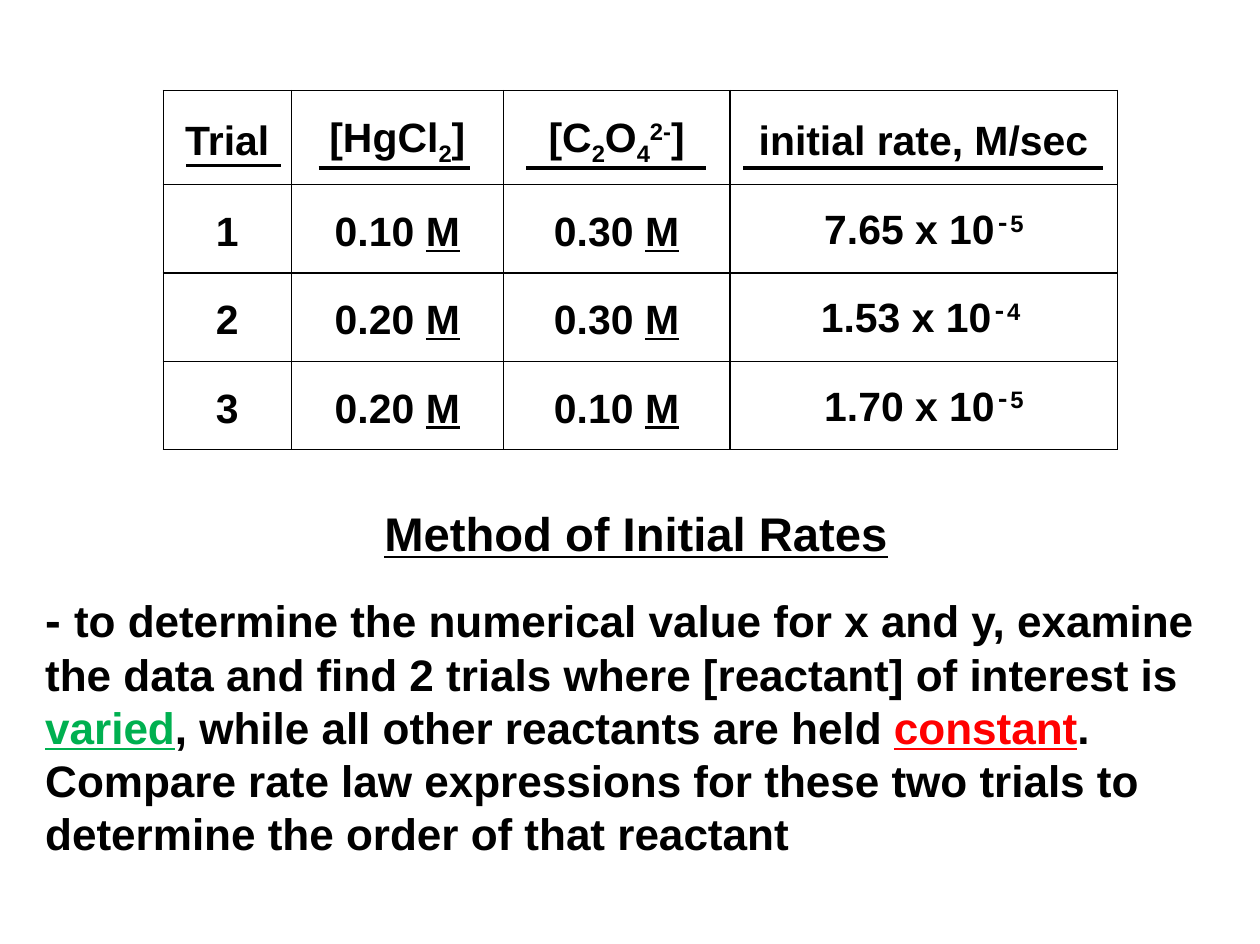
from dataclasses import dataclass

from lxml import etree
from pptx import Presentation
from pptx.dml.color import RGBColor
from pptx.enum.shapes import MSO_CONNECTOR
from pptx.enum.text import MSO_ANCHOR, MSO_AUTO_SIZE, PP_ALIGN
from pptx.oxml.ns import qn
from pptx.util import Cm, Pt

STRAIGHT = MSO_CONNECTOR.STRAIGHT
MIDDLE, TOP = MSO_ANCHOR.MIDDLE, MSO_ANCHOR.TOP
FIXED = MSO_AUTO_SIZE.NONE
CENTER, LEFT = PP_ALIGN.CENTER, PP_ALIGN.LEFT


@dataclass(frozen=True)
class Theme:
    ink: str = "000000"
    green: str = "00B050"
    red: str = "FF0000"
    face: str = "Arial"
    mono: str = "Courier New"
    cell: int = 26
    text: int = 28
    head: int = 30
    grid: float = 1
    rule: float = 2.5


@dataclass(frozen=True)
class Part:
    text: str
    base: int = 0
    under: bool = False
    color: str = ""
    size: int = 0
    face: str = ""


@dataclass(frozen=True)
class Rule:
    left: float
    right: float
    y: float


@dataclass(frozen=True)
class Box:
    x: float
    y: float
    w: float
    h: float


THEME = Theme()
SUB, SUP = -25, 30
WIDTHS = (2.87, 4.75, 5.08, 8.69)
HEIGHTS = (2.11, 1.98, 1.98, 1.98)
GRID = Box(3.66, 2.03, sum(WIDTHS), sum(HEIGHTS))
TITLE = Box(8.36, 11.18, 12.07, 1.55)
BODY = Box(0.76, 13.11, 27.15, 6.32)
RULES = (
    Rule(4.17, 6.3, 3.71),
    Rule(7.14, 10.54, 3.76),
    Rule(11.79, 15.82, 3.76),
    Rule(16.66, 24.71, 3.76),
)
HEADS = (
    (Part("Trial"),),
    (Part("[HgCl"), Part("2", SUB), Part("]")),
    (Part("[C"), Part("2", SUB), Part("O"), Part("4", SUB), Part("2-", SUP), Part("]")),
    (Part("initial rate, M/sec"),),
)
TRIALS = (
    ("1", "0.10", "0.30", "7.65", "5"),
    ("2", "0.20", "0.30", "1.53", "4\N{NO-BREAK SPACE}"),
    ("3", "0.20", "0.10", "1.70", "5"),
)
STEPS = (
    Part("- ", size=THEME.head),
    Part("to determine the numerical value for x and y, examine the data "
         "and find 2 trials where [reactant] of interest is "),
    Part("varied", under=True, color=THEME.green),
    Part(", while all other reactants are held "),
    Part("constant", under=True, color=THEME.red),
    Part(". Compare rate law expressions for these two trials to "
         "determine the order of that reactant"),
)


def molar(value: str) -> tuple:
    return Part(f"{value} "), Part("M", under=True)


def rate(value: str, power: str) -> tuple:
    minus = Part("-", SUP, size=THEME.text, face=THEME.mono)
    return Part(f"{value} x 10"), minus, Part(power, SUP)


def write(para, parts: tuple, size: int, align=LEFT) -> None:
    para.alignment = align
    para.space_before = Pt(0)
    font = para.font
    font.name, font.size, font.bold = THEME.face, Pt(size), True
    font.color.rgb = RGBColor.from_string(THEME.ink)
    for part in parts:
        run = para.add_run()
        run.text = part.text
        if part.under:
            run.font.underline = True
        if part.color:
            run.font.color.rgb = RGBColor.from_string(part.color)
        if part.size:
            run.font.size = Pt(part.size)
        if part.face:
            run.font.name = part.face
        if part.base:
            run.font._element.set("baseline", str(part.base * 1000))


def edge(cell) -> None:
    props = cell._tc.get_or_add_tcPr()
    for spot, side in enumerate(("lnL", "lnR", "lnT", "lnB")):
        line = etree.Element(qn(f"a:{side}"), w=str(Pt(THEME.grid)))
        fill = etree.SubElement(line, qn("a:solidFill"))
        etree.SubElement(fill, qn("a:srgbClr"), val=THEME.ink)
        props.insert(spot, line)


def draw_grid(slide) -> None:
    rows = [HEADS] + [
        ((Part(num),), molar(salt), molar(acid), rate(speed, power))
        for num, salt, acid, speed, power in TRIALS
    ]
    table = slide.shapes.add_table(
        len(rows), len(WIDTHS), Cm(GRID.x), Cm(GRID.y), Cm(GRID.w), Cm(GRID.h)
    ).table
    table.first_row = table.horz_banding = False
    for col, width in zip(table.columns, WIDTHS):
        col.width = Cm(width)
    for row, height, items in zip(table.rows, HEIGHTS, rows):
        row.height = Cm(height)
        for cell, parts in zip(row.cells, items):
            cell.fill.background()
            cell.vertical_anchor = MIDDLE
            cell.margin_left = cell.margin_right = Cm(0.18)
            cell.margin_top = cell.margin_bottom = 0
            para = cell.text_frame.paragraphs[0]
            para.line_spacing = 1.15
            write(para, parts, THEME.cell, CENTER)
            edge(cell)


def draw_rule(slide, rule: Rule) -> None:
    line = slide.shapes.add_connector(
        STRAIGHT, Cm(rule.left), Cm(rule.y), Cm(rule.right), Cm(rule.y)
    )
    line.line.color.rgb = RGBColor.from_string(THEME.ink)
    line.line.width = Pt(THEME.rule)
    etree.SubElement(line._element.spPr, qn("a:effectLst"))


def fill_box(shape, box: Box, parts: tuple, size: int) -> None:
    shape.left, shape.top = Cm(box.x), Cm(box.y)
    shape.width, shape.height = Cm(box.w), Cm(box.h)
    frame = shape.text_frame
    frame.word_wrap = True
    frame.auto_size = FIXED
    frame.vertical_anchor = TOP
    para = frame.paragraphs[0]
    write(para, parts, size)
    props = para._p.get_or_add_pPr()
    props.set("marL", "0")
    props.set("indent", "0")
    props.insert_element_before(etree.Element(qn("a:buNone")), "a:tabLst", "a:defRPr")


def main() -> None:
    deck = Presentation()
    deck.slide_width, deck.slide_height = Cm(28.24), Cm(21.16)
    slide = deck.slides.add_slide(deck.slide_layouts[1])
    draw_grid(slide)
    for rule in RULES:
        draw_rule(slide, rule)
    title = (Part("Method of Initial Rates", under=True),)
    fill_box(slide.shapes.title, TITLE, title, THEME.head)
    fill_box(slide.placeholders[1], BODY, STEPS, THEME.text)
    deck.save("out.pptx")


if __name__ == "__main__":
    main()
